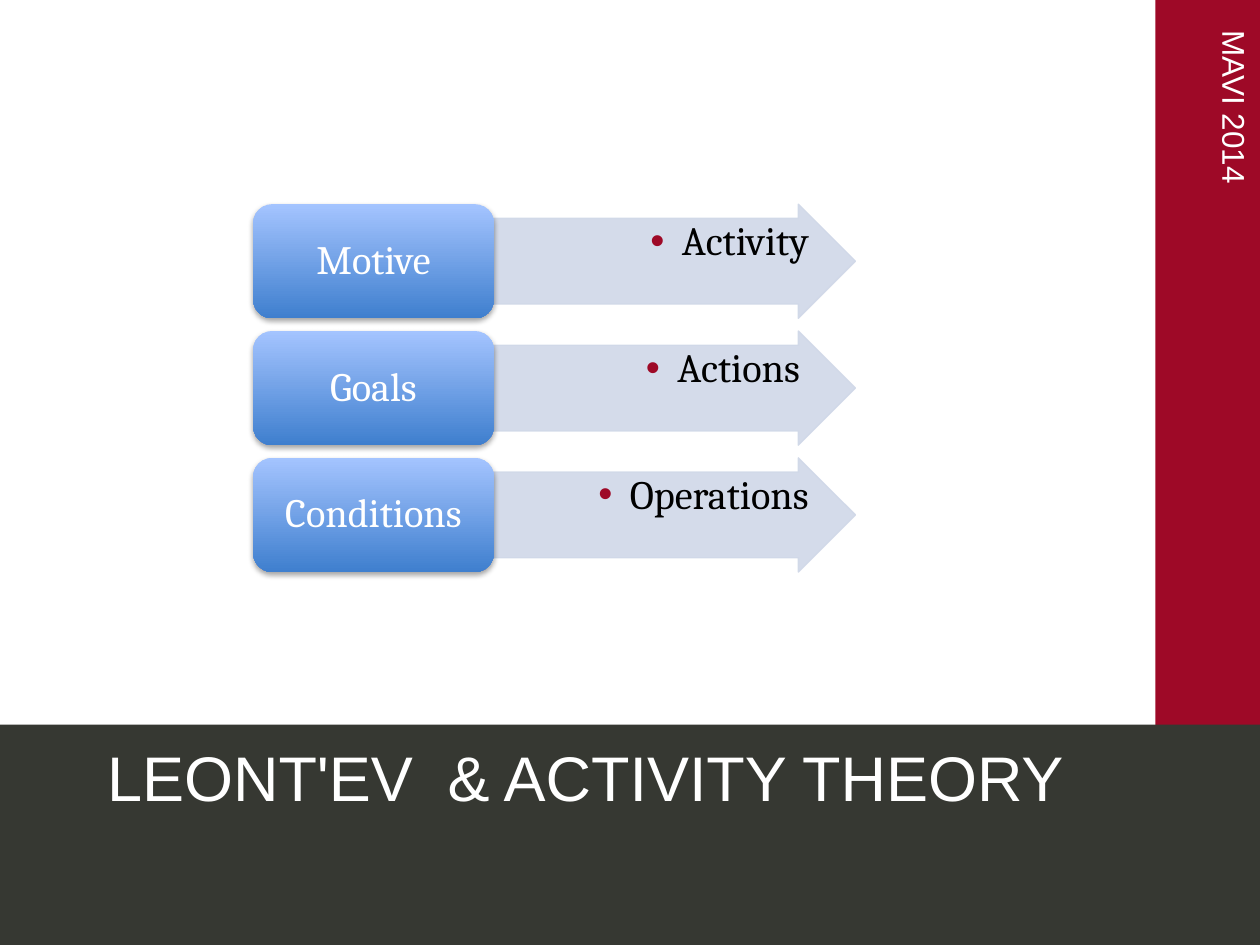
from lxml import etree
from pptx import Presentation
from pptx import util as u
from pptx.dml.color import RGBColor
from pptx.enum import shapes, text
from pptx.oxml import parse_xml
from pptx.oxml.ns import qn

NS = 'xmlns:a="http://schemas.openxmlformats.org/drawingml/2006/main"'
RED, DARK, WHITE, BLACK = "9E0927", "363832", "FFFFFF", "000000"
PALE, LIGHT, BLUE = "D0D8E8", "A4C4FF", "3F7FCE"
KIND = shapes.MSO_SHAPE
ALIGN = text.PP_ALIGN
ANCHOR = text.MSO_ANCHOR
ROWS = [("Motive", "Activity"), ("Goals", "Actions "), ("Conditions", "Operations")]


def rgb(code):
    return RGBColor.from_string(code)


def box(*sides):
    return [u.Inches(side) for side in sides]


def write(shape, words, size=18, font="Arial", color=WHITE, align=ALIGN.LEFT,
          anchor=ANCHOR.TOP, pad=(0.1, 0.05, 0.1, 0.05), line=None, bullet=None):
    frame = shape.text_frame
    frame.word_wrap = True
    frame.auto_size = text.MSO_AUTO_SIZE.NONE
    frame.vertical_anchor = anchor
    (frame.margin_left, frame.margin_top,
     frame.margin_right, frame.margin_bottom) = box(*pad)
    para = frame.paragraphs[0]
    para.alignment = align
    if line:
        para.line_spacing = line
    if bullet:
        props = para._p.get_or_add_pPr()
        props.set("marL", str(u.Inches(0.25)))
        props.set("indent", str(-u.Inches(0.25)))
        for xml in (f'<a:buClr {NS}><a:srgbClr val="{bullet}"/></a:buClr>',
                    f'<a:buFont {NS} typeface="Arial"/>',
                    f'<a:buChar {NS} char="•"/>'):
            props.append(parse_xml(xml))
    run = para.add_run()
    run.text = words
    run.font.size = u.Pt(size)
    run.font.name = font
    run.font.color.rgb = rgb(color)


def draw(slide, kind, *sides):
    shape = slide.shapes.add_shape(kind, *box(*sides))
    shape.shadow.inherit = False
    shape.line.fill.background()
    return shape


def band(slide, color, *sides):
    shape = draw(slide, KIND.RECTANGLE, *sides)
    shape.fill.solid()
    shape.fill.fore_color.rgb = rgb(color)
    return shape


def fade(shape):
    # 90% opacity for fill and line
    for tag in shape._element.spPr.iter(qn("a:srgbClr")):
        etree.SubElement(tag, qn("a:alpha")).set("val", "90000")


def arrow(slide, words, left, top, width, height):
    shape = draw(slide, KIND.RIGHT_ARROW, left, top, width, height)
    shape.adjustments[0] = 0.75
    shape.adjustments[1] = 0.5
    shape.fill.solid()
    shape.fill.fore_color.rgb = rgb(PALE)
    shape.line.color.rgb = rgb(PALE)
    shape.line.width = u.Pt(0.75)
    fade(shape)
    # Label sits inside the shaft
    label = slide.shapes.add_textbox(
        *box(left, top + height / 8, width - 0.35, height * 0.75))
    write(label, words, size=23, font="Cambria", color=BLACK, align=ALIGN.RIGHT,
          pad=(0.02,) * 4, line=0.9, bullet=RED)


def card(slide, words, *sides):
    shape = draw(slide, KIND.ROUNDED_RECTANGLE, *sides)
    shape.fill.gradient()
    shape.fill.gradient_angle = 270
    for stop, color in zip(shape.fill.gradient_stops, (LIGHT, BLUE)):
        stop.color.rgb = rgb(color)
    glow = shape._element.spPr.find(qn("a:effectLst"))
    glow.append(parse_xml(
        f'<a:outerShdw {NS} blurRad="{u.Pt(3.1)}" dist="{u.Pt(1.8)}" dir="5400000" '
        f'rotWithShape="0"><a:srgbClr val="{BLACK}"><a:alpha val="35000"/>'
        '</a:srgbClr></a:outerShdw>'))
    write(shape, words, size=23, font="Cambria", align=ALIGN.CENTER,
          anchor=ANCHOR.MIDDLE, line=0.9)


def flow(slide, left, top, width, height):
    gap, split = 0.1, 1.91
    tall = (height - gap * (len(ROWS) - 1)) / len(ROWS)
    for i, (cause, deed) in enumerate(ROWS):
        y = top + i * (tall + gap)
        arrow(slide, deed, left + split, y, width - split, tall)
        card(slide, cause, left, y, split, tall)


def frame(slide):
    # Side band, bottom band and upright event name
    band(slide, RED, 9.17, 0, 0.83, 7.5)
    band(slide, DARK, 0, 5.75, 10, 1.75)
    event = slide.shapes.add_textbox(*box(7.81, 1.79, 3.98, 0.4))
    event.rotation = 90
    write(event, "MAVI 2014", pad=(0.24, 0.05, 0.1, 0.05))


def head(slide, *sides):
    title = slide.shapes.title
    title.left, title.top, title.width, title.height = box(*sides)
    write(title, "LEONT'EV  & ACTIVITY THEORY", size=36, anchor=ANCHOR.MIDDLE)
    # Bring the title in front of the bands
    slide.shapes._spTree.append(title._element)


def main():
    deck = Presentation()
    deck.slide_width, deck.slide_height = box(10, 7.5)
    slide = deck.slides.add_slide(deck.slide_layouts[5])
    frame(slide)
    head(slide, 0.75, 5.75, 8.92, 0.83)
    flow(slide, 2.01, 1.62, 4.78, 2.92)
    deck.save("out.pptx")


if __name__ == "__main__":
    main()
